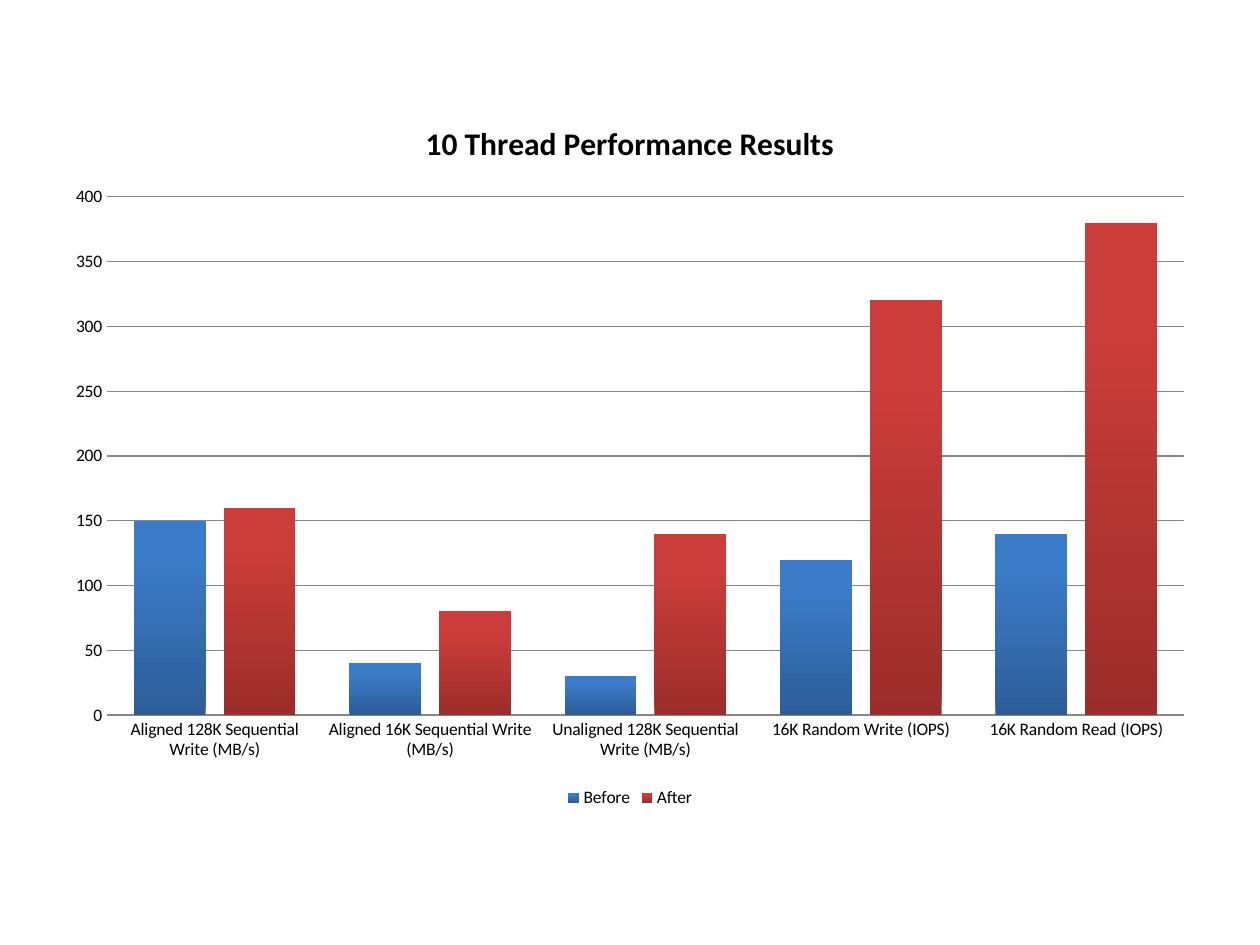
from dataclasses import dataclass

from pptx import Presentation
from pptx import util as u
from pptx.chart import data as chart_data
from pptx.dml import color
from pptx.enum import chart as chart_enum


@dataclass(frozen=True)
class BarSeries:
    name: str
    values: tuple[int, ...]
    base: str
    top: str


CATEGORIES = (
    "Aligned 128K Sequential Write (MB/s)",
    "Aligned 16K Sequential Write (MB/s)",
    "Unaligned 128K Sequential Write (MB/s)",
    "16K Random Write (IOPS)",
    "16K Random Read (IOPS)",
)
SERIES = (
    BarSeries("Before", (150, 40, 30, 120, 140), "2C5D98", "3C7BC7"),
    BarSeries("After", (160, 80, 140, 320, 380), "9B2D2A", "CB3D3A"),
)


def rgb(value: str) -> color.RGBColor:
    return color.RGBColor.from_string(value)


def style_font(font, size: float, bold: bool = False) -> None:
    font.name = "Calibri"
    font.size = u.Pt(size)
    font.bold = bold
    font.color.rgb = rgb("000000")


def style_line(line) -> None:
    line.color.rgb = rgb("868686")
    line.width = u.Pt(0.75)


def style_bars(bars, series: BarSeries) -> None:
    bars.invert_if_negative = False
    fill = bars.format.fill
    fill.gradient()
    fill.gradient_angle = 90
    for stop, position, tint in zip(
        fill.gradient_stops, (0, 0.8), (series.base, series.top)
    ):
        stop.position = position
        stop.color.rgb = rgb(tint)


def style_axes(chart) -> None:
    for axis in (chart.category_axis, chart.value_axis):
        axis.major_tick_mark = chart_enum.XL_TICK_MARK.NONE
        axis.minor_tick_mark = chart_enum.XL_TICK_MARK.NONE
        style_font(axis.tick_labels.font, 10)
    style_line(chart.category_axis.format.line)
    values = chart.value_axis
    values.minimum_scale, values.maximum_scale, values.major_unit = 0, 400, 50
    values.format.line.fill.background()
    values.has_major_gridlines = True
    style_line(values.major_gridlines.format.line)


def add_results_chart(slide) -> None:
    """Add the clustered columns comparing results before and after."""
    results = chart_data.CategoryChartData()
    results.categories = CATEGORIES
    for series in SERIES:
        results.add_series(series.name, series.values)
    chart = slide.shapes.add_chart(
        chart_enum.XL_CHART_TYPE.COLUMN_CLUSTERED,
        u.Inches(0.42), u.Inches(0.75), u.Inches(9.16), u.Inches(5.7),
        results,
    ).chart
    style_font(chart.font, 10)
    chart.has_title = True
    title = chart.chart_title
    title.include_in_layout = False
    title.text_frame.text = "10 Thread Performance Results"
    style_font(title.text_frame.paragraphs[0].runs[0].font, 18, bold=True)
    chart.has_legend = True
    chart.legend.position = chart_enum.XL_LEGEND_POSITION.BOTTOM
    chart.legend.include_in_layout = False
    style_font(chart.legend.font, 10)
    plot = chart.plots[0]
    plot.gap_width = 75
    plot.overlap = -25
    plot.vary_by_categories = False
    for bars, series in zip(plot.series, SERIES):
        style_bars(bars, series)
    style_axes(chart)


def main() -> None:
    deck = Presentation()
    deck.slide_width, deck.slide_height = u.Inches(10), u.Inches(7.5)
    add_results_chart(deck.slides.add_slide(deck.slide_layouts[6]))
    deck.save("out.pptx")


if __name__ == "__main__":
    main()
